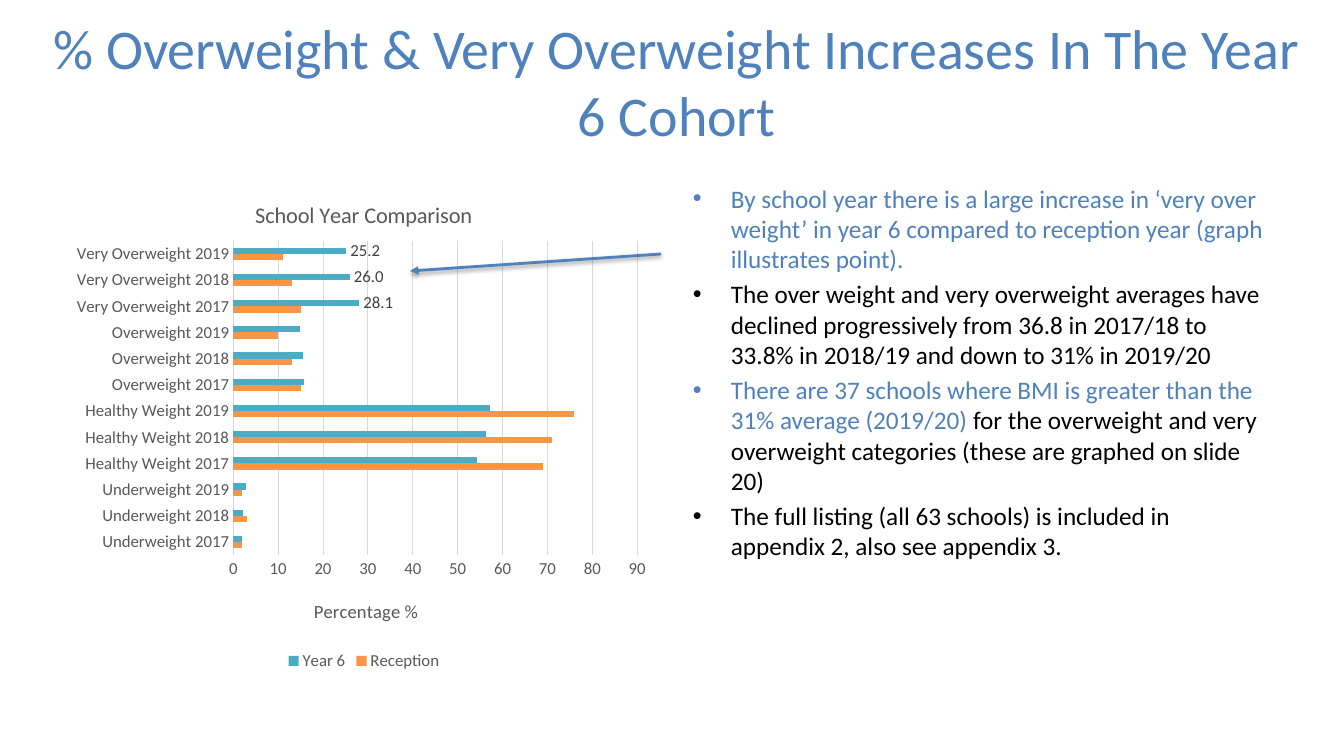
from dataclasses import dataclass

from lxml import etree
from pptx import Presentation
from pptx.chart.data import CategoryChartData
from pptx.dml.color import RGBColor
from pptx.enum.chart import (XL_CHART_TYPE, XL_LABEL_POSITION,
                             XL_LEGEND_POSITION, XL_TICK_MARK)
from pptx.enum.shapes import MSO_CONNECTOR
from pptx.enum.text import MSO_ANCHOR, PP_ALIGN
from pptx.oxml import parse_xml
from pptx.oxml.ns import nsdecls, qn
from pptx.util import Emu, Pt

BAR_CLUSTERED = XL_CHART_TYPE.BAR_CLUSTERED
OUTSIDE_END = XL_LABEL_POSITION.OUTSIDE_END
LEGEND_BOTTOM = XL_LEGEND_POSITION.BOTTOM
NO_TICK = XL_TICK_MARK.NONE
STRAIGHT = MSO_CONNECTOR.STRAIGHT
MIDDLE = MSO_ANCHOR.MIDDLE
CENTER = PP_ALIGN.CENTER

BLUE = RGBColor(0x4F, 0x81, 0xBD)
BLACK = RGBColor(0x00, 0x00, 0x00)
GREY = RGBColor(0x59, 0x59, 0x59)
DARK_GREY = RGBColor(0x40, 0x40, 0x40)
GRID_GREY = RGBColor(0xD9, 0xD9, 0xD9)
ORANGE = RGBColor(0xF7, 0x96, 0x46)
TEAL = RGBColor(0x4B, 0xAC, 0xC6)
FONT = "Calibri"


def px(n: int) -> Emu:
    return Emu(round(n * 914400 / 100.8))


@dataclass
class Frame:
    left: int
    top: int
    width: int
    height: int

    def emu(self) -> tuple[Emu, Emu, Emu, Emu]:
        return px(self.left), px(self.top), px(self.width), px(self.height)


@dataclass
class Run:
    text: str
    color: RGBColor


@dataclass
class BarSeries:
    name: str
    values: list[float]
    number_format: str
    color: RGBColor
    labelled: range


TITLE = Run("% Overweight & Very Overweight Increases In The Year 6 Cohort", BLUE)
TITLE_FRAME = Frame(31, 18, 1291, 126)
CHART_FRAME = Frame(67, 176, 594, 499)
BULLETS_FRAME = Frame(683, 178, 594, 497)

WEIGHTS = ["Underweight", "Healthy Weight", "Overweight", "Very Overweight"]
CATEGORIES = [f"{w} {year}" for w in WEIGHTS for year in (2017, 2018, 2019)]
SERIES = [
    BarSeries("Reception", [2, 3, 2, 69, 71, 76, 15, 13, 10, 15, 13, 11],
              "0", ORANGE, range(0)),
    BarSeries("Year 6", [1.9, 2.1, 2.8, 54.4, 56.4, 57.2,
                         15.7, 15.5, 14.8, 28.1, 26.0, 25.2],
              "0.0", TEAL, range(9, 12)),
]
BULLETS = [
    [Run("By school year there is a large increase in ‘very over weight’ in "
         "year 6 compared to reception year (graph illustrates point).", BLUE)],
    [Run("The over weight and very overweight averages have declined "
         "progressively from 36.8 in 2017/18 to 33.8% in 2018/19 and down to "
         "31% in 2019/20", BLACK)],
    [Run("There are 37 schools where BMI is greater than the 31% average "
         "(2019/20) ", BLUE),
     Run("for the overweight and very overweight categories (these are graphed "
         "on slide 20)", BLACK)],
    [Run("The full listing (all 63 schools) is included in appendix 2, also "
         "see appendix 3.", BLACK)],
]


def style_font(font, size: float, color: RGBColor) -> None:
    font.name = FONT
    font.size = Pt(size)
    font.bold = False
    font.color.rgb = color


def add_run(p, run: Run, size: float) -> None:
    r = p.add_run()
    r.text = run.text
    style_font(r.font, size, run.color)


def place(element, **fractions: float) -> None:
    """Set a manual layout, in fractions of the chart, on a chart part."""
    layout = element.find(qn("c:layout"))
    if layout is None:
        layout = etree.Element(qn("c:layout"))
        element.insert(0, layout)
    manual = etree.SubElement(layout, qn("c:manualLayout"))
    if "w" in fractions:
        etree.SubElement(manual, qn("c:layoutTarget")).set("val", "inner")
    for mode in ("xMode", "yMode"):
        etree.SubElement(manual, qn(f"c:{mode}")).set("val", "edge")
    for name, value in fractions.items():
        etree.SubElement(manual, qn(f"c:{name}")).set("val", str(value))


def write_chart_title(title, text: str, size: float, x: float, y: float) -> None:
    add_run(title.text_frame.paragraphs[0], Run(text, GREY), size)
    place(title.element, x=x, y=y)


def style_line(line, color: RGBColor) -> None:
    line.color.rgb = color
    line.width = Pt(0.75)


def add_comparison_chart(slide) -> None:
    data = CategoryChartData()
    data.categories = CATEGORIES
    for item in SERIES:
        data.add_series(item.name, item.values, item.number_format)
    chart = slide.shapes.add_chart(BAR_CLUSTERED, *CHART_FRAME.emu(), data).chart
    style_font(chart.font, 10, BLACK)
    chart.has_title = True
    write_chart_title(chart.chart_title, "School Year Comparison", 16, 0.31, 0.04)
    chart.has_legend = True
    chart.legend.position = LEGEND_BOTTOM
    chart.legend.include_in_layout = False
    style_font(chart.legend.font, 12, GREY)

    plot = chart.plots[0]
    plot.gap_width = 219
    plot.vary_by_categories = False
    place(chart.element.find(f".//{qn('c:plotArea')}"),
          x=0.28, y=0.13, w=0.68, h=0.63)

    for axis in (chart.category_axis, chart.value_axis):
        axis.major_tick_mark = axis.minor_tick_mark = NO_TICK
        style_font(axis.tick_labels.font, 12, GREY)
    style_line(chart.category_axis.format.line, GRID_GREY)
    values = chart.value_axis
    values.format.line.fill.background()
    values.minimum_scale, values.maximum_scale, values.major_unit = 0, 90, 10
    values.has_major_gridlines = True
    style_line(values.major_gridlines.format.line, GRID_GREY)
    values.has_title = True
    write_chart_title(values.axis_title, "Percentage %", 13.3, 0.41, 0.84)

    for item, series in zip(SERIES, plot.series):
        series.format.fill.solid()
        series.format.fill.fore_color.rgb = item.color
        series.invert_if_negative = False
        if item.labelled:
            series.data_labels.show_value = False
        for i in item.labelled:
            label = series.points[i].data_label
            style_font(label.font, 12, DARK_GREY)
            label.position = OUTSIDE_END


def add_bullets(slide) -> None:
    tf = slide.shapes.add_textbox(*BULLETS_FRAME.emu()).text_frame
    tf.word_wrap = True
    for i, runs in enumerate(BULLETS):
        p = tf.add_paragraph() if i else tf.paragraphs[0]
        props = p._p.get_or_add_pPr()
        props.set("marL", str(px(38)))
        props.set("indent", str(px(-38)))
        etree.SubElement(props, qn("a:buFont")).set("typeface", "Arial")
        etree.SubElement(props, qn("a:buChar")).set("char", "•")
        if i:
            p.space_before = Pt(3.6)
        for run in runs:
            add_run(p, run, 18)


def add_pointer(slide) -> None:
    s = slide.shapes.add_connector(STRAIGHT, px(661), px(254), px(410), px(271))
    s.line.color.rgb = BLUE
    s.line.width = Pt(2)
    etree.SubElement(s.line._get_or_add_ln(), qn("a:tailEnd")).set("type", "triangle")
    s.element.spPr.append(parse_xml(
        f'<a:effectLst {nsdecls("a")}>'
        '<a:outerShdw blurRad="40000" dist="20000" dir="5400000" rotWithShape="0">'
        '<a:srgbClr val="000000"><a:alpha val="38000"/></a:srgbClr>'
        '</a:outerShdw></a:effectLst>'))


def main() -> None:
    prs = Presentation()
    prs.slide_width, prs.slide_height = px(1344), px(756)
    slide = prs.slides.add_slide(prs.slide_layouts[5])
    title = slide.shapes.title
    title.left, title.top, title.width, title.height = TITLE_FRAME.emu()
    title.text_frame.vertical_anchor = MIDDLE
    p = title.text_frame.paragraphs[0]
    p.alignment = CENTER
    add_run(p, TITLE, 40)
    add_comparison_chart(slide)
    add_bullets(slide)
    add_pointer(slide)
    prs.save("out.pptx")


if __name__ == "__main__":
    main()
